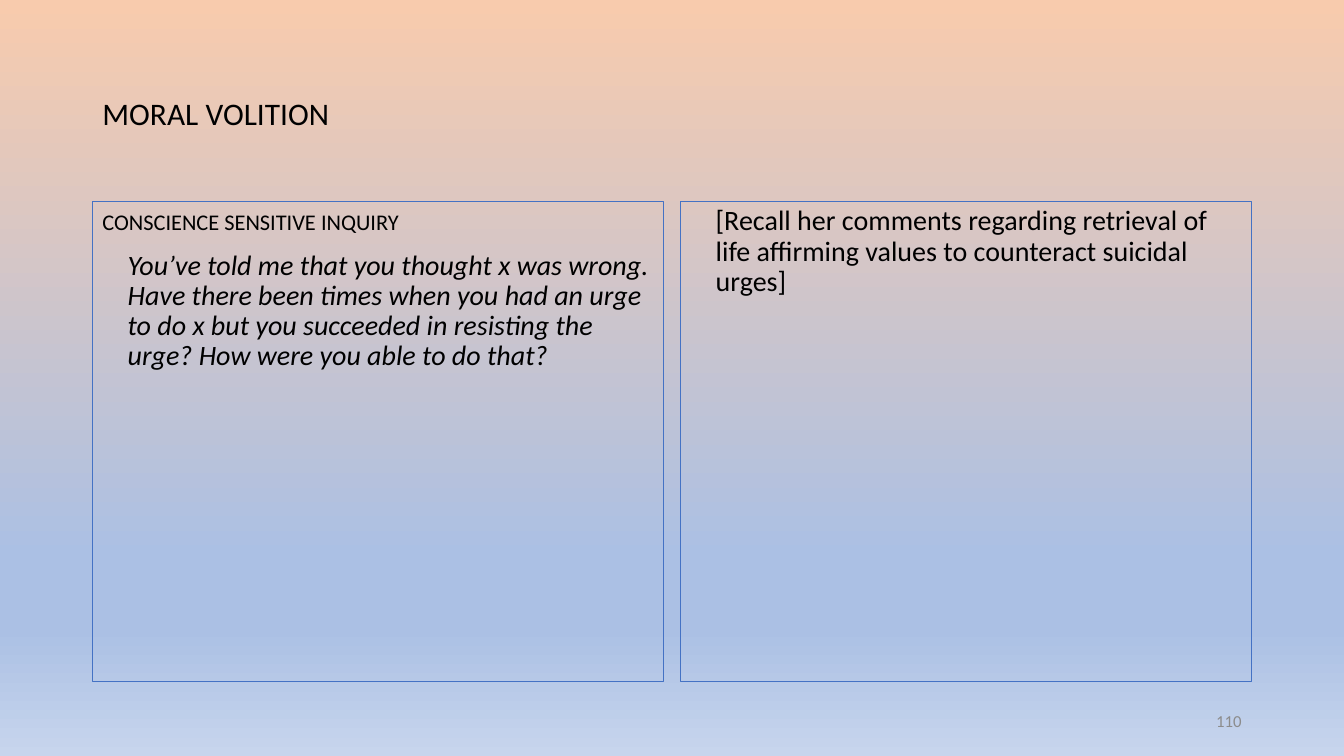
"""Build the Moral Volition slide with two outlined text panels."""
from dataclasses import dataclass

from lxml import etree
from pptx import Presentation
from pptx.dml.color import RGBColor
from pptx.enum.text import MSO_ANCHOR, MSO_AUTO_SIZE, PP_ALIGN
from pptx.oxml.ns import qn
from pptx.slide import Slide
from pptx.text.text import TextFrame, _Paragraph
from pptx.util import Emu, Pt

PX = 9525
FONT = "Calibri"
TWO_CONTENT = 3
HANG = 24
TOP, MIDDLE = MSO_ANCHOR.TOP, MSO_ANCHOR.MIDDLE
LEFT, RIGHT = PP_ALIGN.LEFT, PP_ALIGN.RIGHT
NO_AUTOFIT = MSO_AUTO_SIZE.NONE

BLACK = RGBColor(0x00, 0x00, 0x00)
GRAY = RGBColor(0x8C, 0x8C, 0x8C)
BLUE = RGBColor(0x44, 0x72, 0xC4)
PEACH = RGBColor(0xF8, 0xCB, 0xAD)
SKY = RGBColor(0xAB, 0xC0, 0xE4)
PALE = RGBColor(0xC7, 0xD5, 0xED)
BACKGROUND = ((0, PEACH), (74, SKY), (83, SKY), (100, PALE))


@dataclass(frozen=True)
class Line:
    """One paragraph of a panel."""
    text: str
    small_caps: bool = False
    italic: bool = False


@dataclass(frozen=True)
class Panel:
    """One outlined column, filled from a body placeholder."""
    idx: int
    x: int
    lines: tuple[Line, ...]


PANELS = (
    Panel(1, 88, (
        Line("conscience sensitive inquiry", small_caps=True),
        Line("\tYou’ve told me that you thought x was wrong. Have there been times "
             "when you had an urge to do x but you succeeded in resisting the urge? "
             "How were you able to do that?", italic=True),
    )),
    Panel(2, 648, (
        Line("\t[Recall her comments regarding retrieval of life affirming values "
             "to counteract suicidal urges]"),
    )),
)


def px(n: int) -> Emu:
    """Turn pixels into EMU."""
    return Emu(n * PX)


def place(sp, x: int, y: int, w: int, h: int, anchor: MSO_ANCHOR) -> TextFrame:
    """Position a shape and return its prepared text frame."""
    sp.left, sp.top, sp.width, sp.height = map(px, (x, y, w, h))
    tf = sp.text_frame
    tf.word_wrap = True
    tf.auto_size = NO_AUTOFIT
    tf.vertical_anchor = anchor
    return tf


def write(p: _Paragraph, text: str, *, size: int, color: RGBColor = BLACK,
          align: PP_ALIGN = LEFT, spacing: float = 0.9, before: int = 0,
          small_caps: bool = False, italic: bool = False) -> None:
    """Write formatted text into a paragraph."""
    p.alignment, p.line_spacing, p.space_before = align, spacing, Pt(before)
    r = p.add_run()
    r.text = text
    r.font.name, r.font.size, r.font.italic = FONT, Pt(size), italic
    r.font.color.rgb = color
    if small_caps:
        r.font._element.set("cap", "small")


def hang(p: _Paragraph) -> None:
    """Give a paragraph a hanging indent without a bullet."""
    ppr = p._p.get_or_add_pPr()
    ppr.set("marL", str(px(HANG)))
    ppr.set("indent", str(-px(HANG)))
    etree.SubElement(ppr, qn("a:buNone"))


def paint_background(s: Slide) -> None:
    """Fill the slide with a top-to-bottom gradient."""
    fill = s.background.fill
    fill.gradient()
    fill.gradient_angle = 270
    stops = s.element.find(".//" + qn("a:gsLst"))
    for gs in list(stops):
        stops.remove(gs)
    for percent, color in BACKGROUND:
        gs = etree.SubElement(stops, qn("a:gs"), pos=str(percent * 1000))
        etree.SubElement(gs, qn("a:srgbClr"), val=str(color))


def draw_panel(s: Slide, panel: Panel) -> None:
    """Outline and fill one column."""
    sp = s.placeholders[panel.idx]
    tf = place(sp, panel.x, 192, 544, 457, TOP)
    sp.line.color.rgb = BLUE
    sp.line.width = Pt(0.75)
    for i, line in enumerate(panel.lines):
        p = tf.add_paragraph() if i else tf.paragraphs[0]
        write(p, line.text, size=20, before=10,
              small_caps=line.small_caps, italic=line.italic)
        hang(p)


def main() -> None:
    """Build and save the presentation."""
    prs = Presentation()
    prs.slide_width, prs.slide_height = px(1280), px(720)
    s = prs.slides.add_slide(prs.slide_layouts[TWO_CONTENT])
    paint_background(s)
    for panel in PANELS:
        draw_panel(s, panel)
    number = s.shapes.add_textbox(0, 0, 0, 0)
    tf = place(number, 904, 667, 288, 38, MIDDLE)
    write(tf.paragraphs[0], "110", size=12, color=GRAY, align=RIGHT, spacing=1.0)
    tf = place(s.shapes.title, 88, 38, 1104, 139, MIDDLE)
    write(tf.paragraphs[0], "moral volition", size=28, small_caps=True)
    prs.save("out.pptx")


if __name__ == "__main__":
    main()
